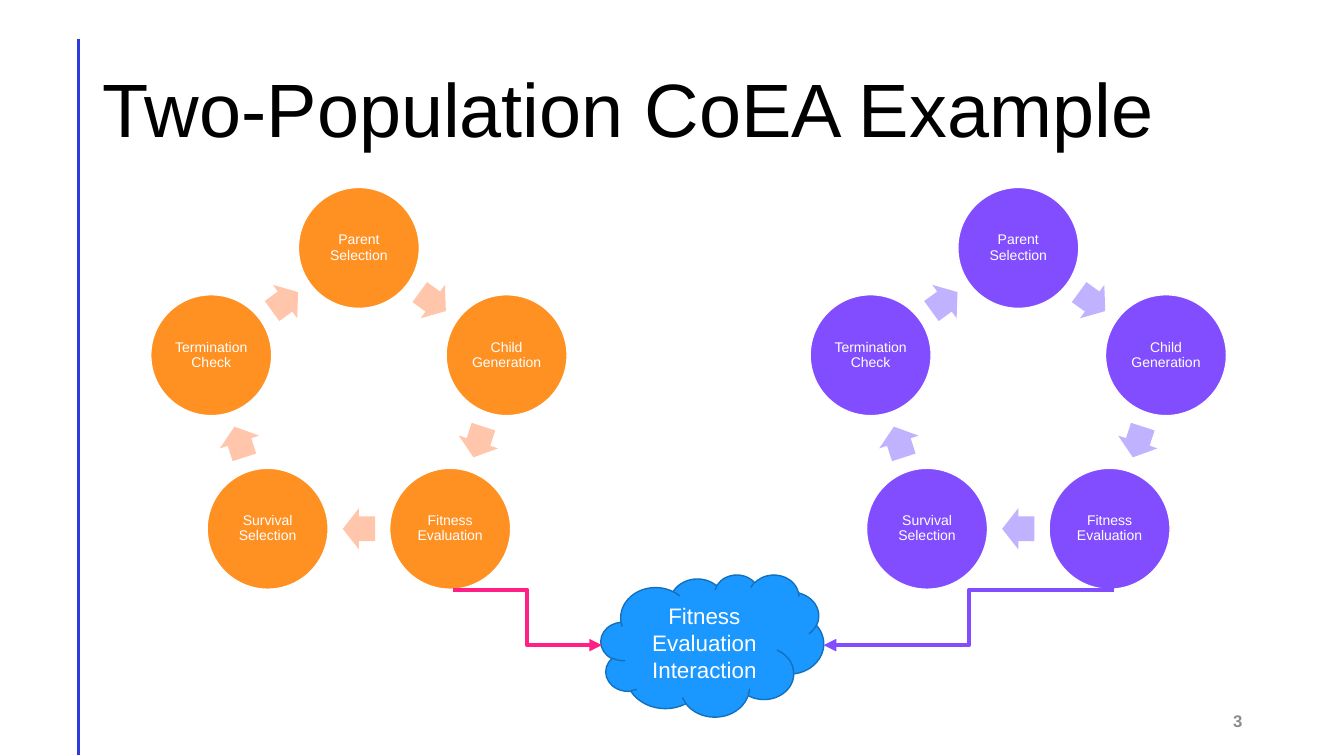
from dataclasses import dataclass
from math import cos, radians, sin

from lxml.etree import SubElement
from pptx import Presentation
from pptx.dml.color import RGBColor
from pptx.enum.shapes import MSO_CONNECTOR as CONN, MSO_SHAPE as SHAPE
from pptx.enum.text import MSO_ANCHOR as ANCHOR, PP_ALIGN as ALIGN
from pptx.oxml.ns import qn
from pptx.util import Inches, Pt


@dataclass(frozen=True)
class Theme:
    font: str = "Arial"
    black: str = "000000"
    white: str = "FFFFFF"
    gray: str = "8C8C8C"
    rule: str = "2B3BE0"
    orange: str = "FF9022"
    peach: str = "FFC6AC"
    purple: str = "814DFF"
    lilac: str = "C1B2FF"
    blue: str = "1A98FF"
    navy: str = "1370BD"
    pink: str = "FF1F85"
    title_size: int = 54
    cloud_size: int = 16
    number_size: int = 12
    step_size: int = 10


STEPS = ["Parent Selection", "Child Generation", "Fitness Evaluation",
         "Survival Selection", "Termination Check"]


def write(tf, text, *, size, color, font, bold=False, align=ALIGN.LEFT,
          spacing=None, inset=None):
    """Fill a text frame with one formatted paragraph."""
    tf.word_wrap = True
    tf.vertical_anchor = ANCHOR.MIDDLE
    if inset is not None:
        tf.margin_left = tf.margin_right = Inches(inset)
        tf.margin_top = tf.margin_bottom = Inches(inset)
    p = tf.paragraphs[0]
    p.alignment = align
    if spacing:
        p.line_spacing = spacing
    r = p.add_run()
    r.text = text
    r.font.name = font
    r.font.size = Pt(size)
    r.font.bold = bold
    r.font.color.rgb = RGBColor.from_string(color)


class SlideBuilder:
    def __init__(self, prs, theme):
        self.theme = theme
        self.slide = prs.slides.add_slide(prs.slide_layouts[5])
        self.shapes = self.slide.shapes

    def title(self, text, x, y, w, h):
        sp = self.shapes.title
        sp.left, sp.top, sp.width, sp.height = map(Inches, (x, y, w, h))
        write(sp.text_frame, text, size=self.theme.title_size,
              color=self.theme.black, font=self.theme.font, spacing=0.9)

    def text(self, text, x, y, w, h, **fmt):
        sp = self.shapes.add_textbox(*map(Inches, (x, y, w, h)))
        write(sp.text_frame, text, font=self.theme.font, **fmt)

    def shape(self, kind, x, y, w, h, fill, line=None):
        sp = self.shapes.add_shape(kind, *map(Inches, (x, y, w, h)))
        sp.shadow.inherit = False
        sp.fill.solid()
        sp.fill.fore_color.rgb = RGBColor.from_string(fill)
        if line:
            sp.line.color.rgb = RGBColor.from_string(line)
            sp.line.width = Pt(1)
        else:
            sp.line.fill.background()
        return sp

    def label(self, sp, text, size, **fmt):
        write(sp.text_frame, text, size=size, color=self.theme.white,
              font=self.theme.font, align=ALIGN.CENTER, **fmt)

    def line(self, kind, start, end, color, width, arrow=False):
        cxn = self.shapes.add_connector(kind, *map(Inches, start + end))
        cxn.line.color.rgb = RGBColor.from_string(color)
        cxn.line.width = Pt(width)
        if arrow:
            SubElement(cxn.line._get_or_add_ln(), qn("a:tailEnd"), type="triangle")
        SubElement(cxn._element.spPr, qn("a:effectLst"))

    def cycle(self, steps, cx, cy, radius, fill, arrow_fill):
        """Steps clockwise on a ring, with an arrow midway between neighbours."""
        size, arrow_w, arrow_h = 1.2, 0.32, 0.41
        turn = 360 / len(steps)
        mid_radius = radius * cos(radians(turn / 2))
        for i, step in enumerate(steps):
            a = radians(i * turn)
            sp = self.shape(SHAPE.OVAL, cx + radius * sin(a) - size / 2,
                            cy - radius * cos(a) - size / 2, size, size,
                            fill, self.theme.white)
            self.label(sp, step, self.theme.step_size, spacing=0.9, inset=0.01)

            heading = (i + 0.5) * turn
            a = radians(heading)
            sp = self.shape(SHAPE.RIGHT_ARROW, cx + mid_radius * sin(a) - arrow_w / 2,
                            cy - mid_radius * cos(a) - arrow_h / 2,
                            arrow_w, arrow_h, arrow_fill)
            sp.adjustments[0] = 0.6
            sp.adjustments[1] = 0.5
            sp.rotation = heading


def main():
    prs = Presentation()
    prs.slide_width, prs.slide_height = Inches(13.33), Inches(7.5)
    th = Theme()
    b = SlideBuilder(prs, th)

    # Frame: side rule, title, slide number
    b.line(CONN.STRAIGHT, (0.78, 0.39), (0.78, 7.49), th.rule, 2)
    b.title("Two-Population CoEA Example", 0.92, 0.4, 11.5, 1.45)
    b.text("3", 9.42, 6.95, 3, 0.4, size=th.number_size, color=th.gray,
           bold=True, align=ALIGN.RIGHT)

    # The two populations
    b.cycle(STEPS, 10.1, 4, 1.54, th.purple, th.lilac)
    b.cycle(STEPS, 3.56, 4, 1.54, th.orange, th.peach)

    # Shared fitness evaluation
    cloud = b.shape(SHAPE.CLOUD, 5.96, 5.7, 2.21, 1.41, th.blue, th.navy)
    b.label(cloud, "Fitness Evaluation Interaction", th.cloud_size)
    b.line(CONN.ELBOW, (11.05, 5.85), (8.17, 6.4), th.purple, 3, arrow=True)
    b.line(CONN.ELBOW, (4.49, 5.85), (5.97, 6.4), th.pink, 3, arrow=True)

    prs.save("out.pptx")


if __name__ == "__main__":
    main()
